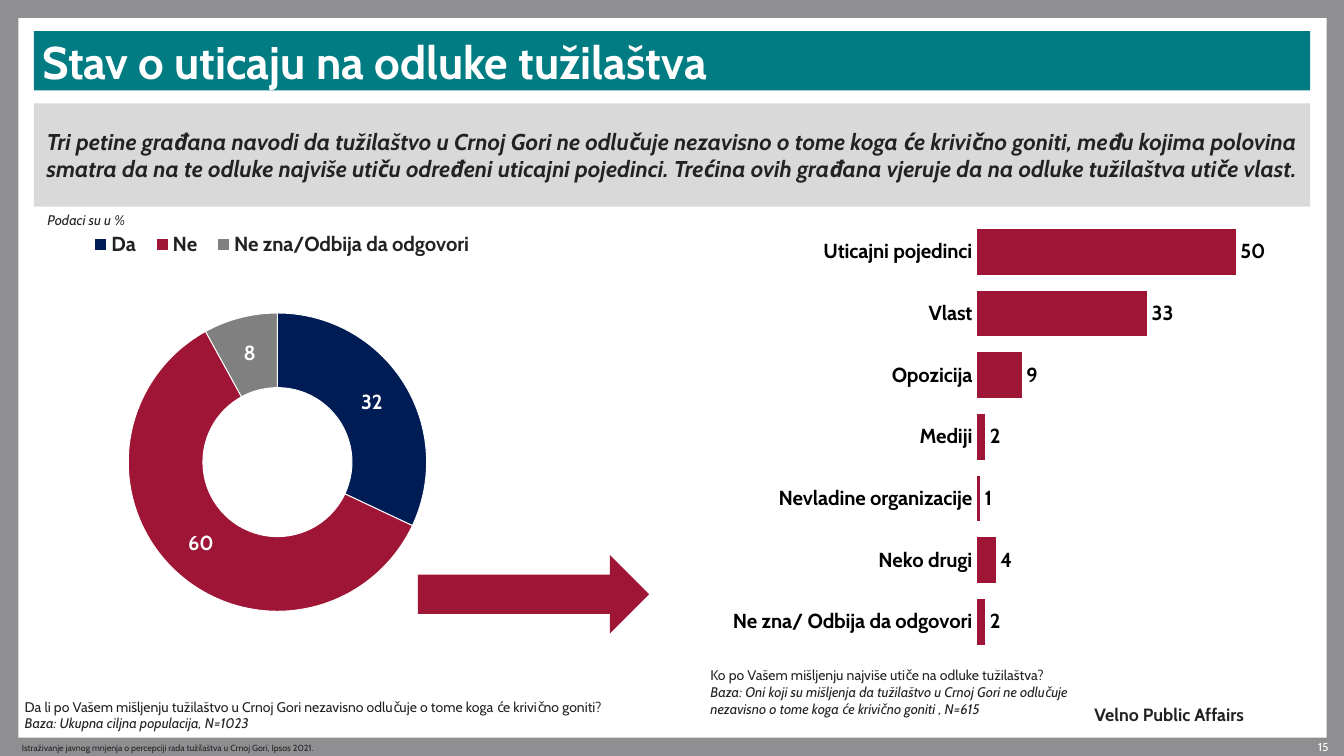
from lxml import etree
from pptx import Presentation
from pptx.chart.data import CategoryChartData
from pptx.dml.color import RGBColor
from pptx.enum.chart import XL_CHART_TYPE, XL_LABEL_POSITION, XL_LEGEND_POSITION, XL_TICK_MARK
from pptx.enum.shapes import MSO_SHAPE
from pptx.enum.text import MSO_ANCHOR, PP_ALIGN
from pptx.oxml.ns import qn
from pptx.util import Inches, Pt

LEFT, RIGHT, JUSTIFY = PP_ALIGN.LEFT, PP_ALIGN.RIGHT, PP_ALIGN.JUSTIFY
TOP, MIDDLE = MSO_ANCHOR.TOP, MSO_ANCHOR.MIDDLE
RECTANGLE, RIGHT_ARROW = MSO_SHAPE.RECTANGLE, MSO_SHAPE.RIGHT_ARROW
DOUGHNUT, BAR = XL_CHART_TYPE.DOUGHNUT, XL_CHART_TYPE.BAR_CLUSTERED
LEGEND_TOP = XL_LEGEND_POSITION.TOP
OUTSIDE_END = XL_LABEL_POSITION.OUTSIDE_END
NO_TICK = XL_TICK_MARK.NONE

INK, WHITE, CRIMSON = "222223", "FFFFFF", "9F1535"
NUMBER_FORMAT = "#,##0;\\-#,##0"


def color(hex_value):
    return RGBColor.from_string(hex_value)


def set_font(font, hex_value, **values):
    font.name = "Cabin"
    font.color.rgb = color(hex_value)
    for name, value in values.items():
        setattr(font, name, value)


presentation = Presentation()
presentation.slide_width = Inches(14.7)
presentation.slide_height = Inches(8.27)
slide = presentation.slides.add_slide(presentation.slide_layouts[6])
slide.background.fill.solid()
slide.background.fill.fore_color.rgb = color("8F8F92")

panels = []
for kind, box, fill in [
    (RECTANGLE, (0.2, 0.2, 14.31, 7.87), WHITE),
    (RECTANGLE, (0.37, 0.34, 13.96, 0.65), "007C82"),
    (RECTANGLE, (0.37, 1.13, 13.96, 1.13), "D9D9D9"),
    (RIGHT_ARROW, (4.57, 6.07, 2.53, 0.86), CRIMSON),
]:
    panel = slide.shapes.add_shape(kind, *map(Inches, box))
    panel.shadow.inherit = False
    panel.fill.solid()
    panel.fill.fore_color.rgb = color(fill)
    panel.line.fill.background()
    panels.append(panel)
page, title, summary, arrow = panels

boxes = {}
for name, box in {
    "number": (14.06, 8.09, 0.47, 0.17),
    "department": (11.97, 7.69, 2.09, 0.24),
    "study": (0.24, 8.09, 4.86, 0.18),
    "independence": (0.27, 7.63, 7, 0.38),
    "unit": (0.42, 2.27, 1.34, 0.29),
    "influence": (7.77, 7.13, 5.5, 0.88),
}.items():
    boxes[name] = slide.shapes.add_textbox(*map(Inches, box))

plain = {"size": Pt(11)}
italic = {"size": Pt(11), "italic": True}
for shape, align, anchor, margins, hex_value, lines in [
    (title, LEFT, MIDDLE, (0.09, 0.02), WHITE, [
        ("Stav o uticaju na odluke tužilaštva", {"size": Pt(36), "bold": True})]),
    (summary, JUSTIFY, MIDDLE, (0.14, 0), INK, [
        ("Tri petine građana navodi da tužilaštvo u Crnoj Gori ne odlučuje nezavisno o tome koga "
         "će krivično goniti, među kojima polovina smatra da na te odluke najviše utiču određeni "
         "uticajni pojedinci. Trećina ovih građana vjeruje da na odluke tužilaštva utiče vlast.",
         {"size": Pt(18), "bold": True, "italic": True})]),
    (boxes["number"], RIGHT, MIDDLE, (0, 0), WHITE, [("15", {"size": Pt(9)})]),
    (boxes["department"], LEFT, MIDDLE, (0, 0), INK, [
        ("Velno Public Affairs", {"size": Pt(14), "bold": True})]),
    (boxes["study"], LEFT, MIDDLE, (0, 0), INK, [
        ("Istraživanje javnog mnjenja o percepciji rada tužilaštva u Crnoj Gori, Ipsos 2021.",
         {"size": Pt(7)})]),
    (boxes["independence"], LEFT, MIDDLE, (0, 0), INK, [
        ("Da li po Vašem mišljenju tužilaštvo u Crnoj Gori nezavisno odlučuje o tome koga će "
         "krivično goniti?", plain),
        ("Baza: Ukupna ciljna populacija, N=1023", italic)]),
    (boxes["unit"], LEFT, TOP, (0.1, 0.05), INK, [("Podaci su u %", italic)]),
    (boxes["influence"], LEFT, MIDDLE, (0, 0), INK, [
        ("Ko po Vašem mišljenju najviše utiče na odluke tužilaštva?", plain),
        ("Baza: Oni koji su mišljenja da tužilaštvo u Crnoj Gori ne odlučuje", italic),
        ("nezavisno o tome koga će krivično goniti , N=615", italic)]),
]:
    frame = shape.text_frame
    frame.word_wrap = True
    frame.vertical_anchor = anchor
    frame.margin_left = frame.margin_right = Inches(margins[0])
    frame.margin_top = frame.margin_bottom = Inches(margins[1])
    for index, (text, values) in enumerate(lines):
        paragraph = frame.add_paragraph() if index else frame.paragraphs[0]
        paragraph.alignment = align
        run = paragraph.add_run()
        run.text = text
        set_font(run.font, hex_value, **values)

charts = []
for kind, box, answers in [
    (DOUGHNUT, (0.39, 2.37, 4.99, 5.02),
     {"Da": 32, "Ne": 60, "Ne zna/Odbija da odgovori": 8}),
    (BAR, (7.25, 2.37, 6.85, 4.77),
     {"Uticajni pojedinci": 50, "Vlast": 33, "Opozicija": 9, "Mediji": 2,
      "Nevladine organizacije": 1, "Neko drugi": 4, "Ne zna/ Odbija da odgovori": 2}),
]:
    data = CategoryChartData(number_format="0")
    data.categories = list(answers)
    data.add_series("Series 1", list(answers.values()))
    chart = slide.shapes.add_chart(kind, *map(Inches, box), data).chart
    chart.has_title = False
    chart.has_legend = False
    charts.append(chart)
independence, influence = charts

set_font(independence.font, INK, size=Pt(18))
independence.has_legend = True
legend = independence.legend
legend.position = LEGEND_TOP
legend.include_in_layout = False
set_font(legend.font, INK, size=Pt(16), bold=True)
ring = independence.plots[0]
ring._element.find(qn("c:holeSize")).set("val", "40")
for index, fill in enumerate(["001C54", CRIMSON, "808080"]):
    slice_format = ring.series[0].points[index].format
    slice_format.fill.solid()
    slice_format.fill.fore_color.rgb = color(fill)
    slice_format.line.color.rgb = color(WHITE)
    slice_format.line.width = Pt(0.75)

set_font(influence.font, "000000", size=Pt(16), bold=True)
bars = influence.plots[0]
bars.gap_width = 30
bars.overlap = 100
bars.vary_by_categories = False
bar_format = bars.series[0].format
bar_format.fill.solid()
bar_format.fill.fore_color.rgb = color(CRIMSON)
bar_format.line.color.rgb = color(WHITE)
bar_format.line.width = Pt(1.46)
answer_axis = influence.category_axis
answer_axis.reverse_order = True
answer_axis.major_tick_mark = NO_TICK
answer_axis.format.line.fill.background()
share_axis = influence.value_axis
share_axis.minimum_scale = 0
share_axis.maximum_scale = 60
share_axis.has_major_gridlines = False
share_axis.visible = False

for plot, label_color in [(ring, WHITE), (bars, "000000")]:
    plot.has_data_labels = True
    labels = plot.data_labels
    labels.show_value = True
    labels.show_percentage = False
    labels.number_format = NUMBER_FORMAT
    labels.number_format_is_linked = False
    set_font(labels.font, label_color, size=Pt(16), bold=True)
bars.data_labels.position = OUTSIDE_END

for parent, target, place in [
    (independence._chartSpace.chart.plotArea, "inner", (0.19, 0.21, 0.68, 0.65)),
    (influence._chartSpace.chart.plotArea, "inner", (0.5, 0.01, 0.5, 0.99)),
    (legend._element, None, (0.1, 0.02, 0.88, 0.08)),
]:
    layout = parent.find(qn("c:layout"))
    if layout is None:
        layout = etree.Element(qn("c:layout"))
        parent.insert(1 if parent is legend._element else 0, layout)
    manual = etree.SubElement(layout, qn("c:manualLayout"))
    settings = [("layoutTarget", target)] if target else []
    settings += [("xMode", "edge"), ("yMode", "edge"), *zip("xywh", place)]
    for tag, value in settings:
        etree.SubElement(manual, qn(f"c:{tag}")).set("val", str(value))

presentation.save("out.pptx")
